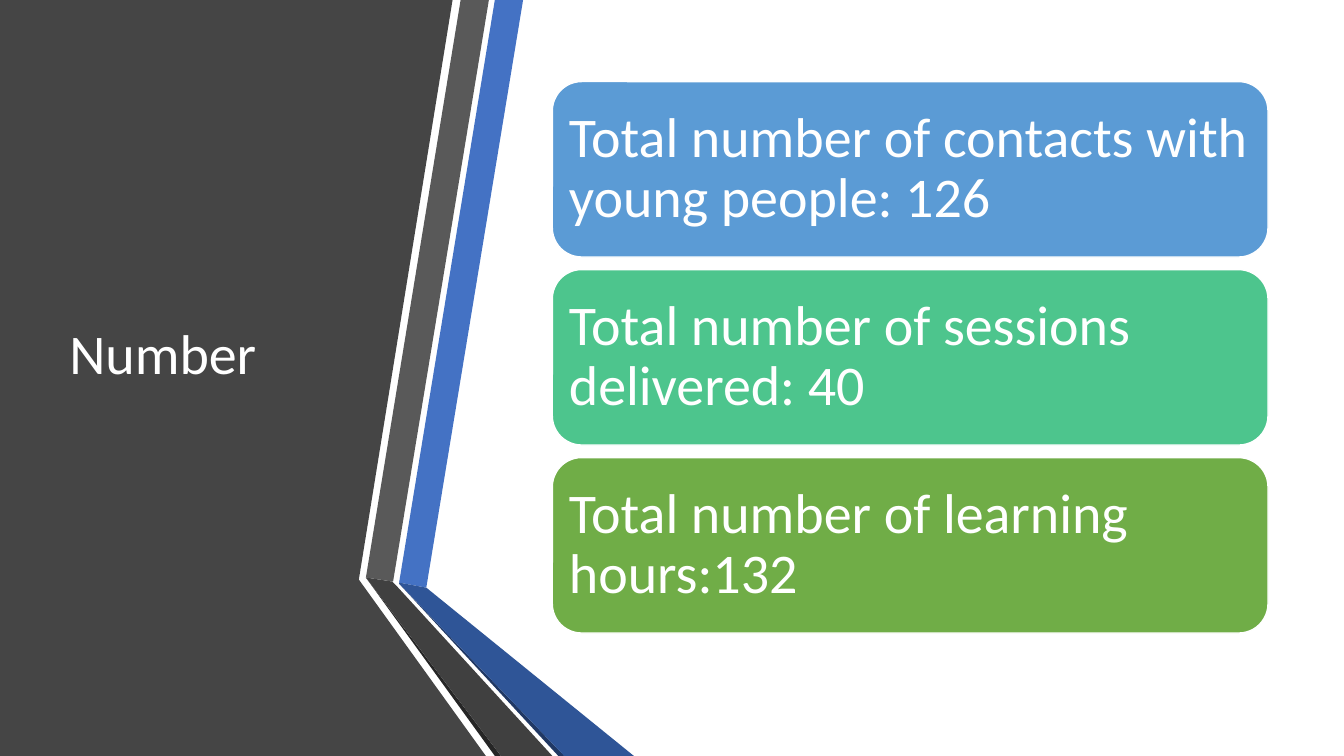
from pptx import Presentation
from pptx.dml.color import RGBColor
from pptx.enum.shapes import MSO_SHAPE
from pptx.enum.text import MSO_ANCHOR
from pptx.util import Pt

ROUND = MSO_SHAPE.ROUNDED_RECTANGLE
MIDDLE = MSO_ANCHOR.MIDDLE
PX = 9144


class Theme:
    font = "Calibri"
    size = Pt(40)
    edge = Pt(1)
    white = "FFFFFF"
    panel = "454545"
    blue, navy, deep = "4472C4", "2F5597", "203864"
    grey, dark, black = "595959", "404040", "262626"
    cards = ["5B9BD5", "4DC58D", "70AD47"]


TITLE = "Number"
FACTS = [
    "Total number of contacts with young people: 126",
    "Total number of sessions delivered: 40",
    "Total number of learning hours:132",
]
BANDS = [
    (Theme.panel, [(0, 0), (449, 0), (356, 575), (482, 750), (0, 750)]),
    (Theme.blue, [(396, 578), (423, 583), (519, 0), (491, 0)]),
    (Theme.grey, [(485, 0), (457, 0), (363, 573), (390, 577)]),
    (Theme.black, [(363, 573), (491, 750), (497, 750)]),
    (Theme.deep, [(396, 579), (554, 750), (560, 750)]),
    (Theme.navy, [(396, 579), (560, 750), (629, 750), (423, 583), (396, 578)]),
    (Theme.dark, [(548, 750), (395, 583), (389, 577), (363, 573), (497, 750)]),
]
HEAD = (59, 75, 304, 558)
CARD = (548, 81, 710, 174)
STEP = 186.5
INSET = 8


def emu(*sides):
    return [round(side * PX) for side in sides]


def paint(shape, color):
    shape.shadow.inherit = False
    shape.fill.solid()
    shape.fill.fore_color.rgb = RGBColor.from_string(color)


def write(shape, words):
    frame = shape.text_frame
    frame.word_wrap = True
    frame.vertical_anchor = MIDDLE
    para = frame.paragraphs[0]
    para.text = words
    para.alignment = 1
    para.line_spacing = 0.9
    para.font.name = Theme.font
    para.font.size = Theme.size
    para.font.color.rgb = RGBColor.from_string(Theme.white)
    return frame


def add_band(shapes, color, points):
    pen = shapes.build_freeform(*points[0], scale=PX)
    pen.add_line_segments(points[1:], close=True)
    band = pen.convert_to_shape()
    paint(band, color)
    band.line.fill.background()


def add_card(shapes, row, words, color):
    left, top, width, height = CARD
    card = shapes.add_shape(ROUND, *emu(left, top + row * STEP, width, height))
    paint(card, color)
    card.line.color.rgb = RGBColor.from_string(Theme.white)
    card.line.width = Theme.edge
    frame = write(card, words)
    frame.margin_left = frame.margin_right = INSET * PX
    frame.margin_top = frame.margin_bottom = INSET * PX


def main():
    deck = Presentation()
    deck.slide_width, deck.slide_height = emu(1333.33, 750)
    shapes = deck.slides.add_slide(deck.slide_layouts[6]).shapes
    for color, points in BANDS:
        add_band(shapes, color, points)
    write(shapes.add_textbox(*emu(*HEAD)), TITLE)
    for row, (words, color) in enumerate(zip(FACTS, Theme.cards)):
        add_card(shapes, row, words, color)
    deck.save("out.pptx")


if __name__ == "__main__":
    main()
